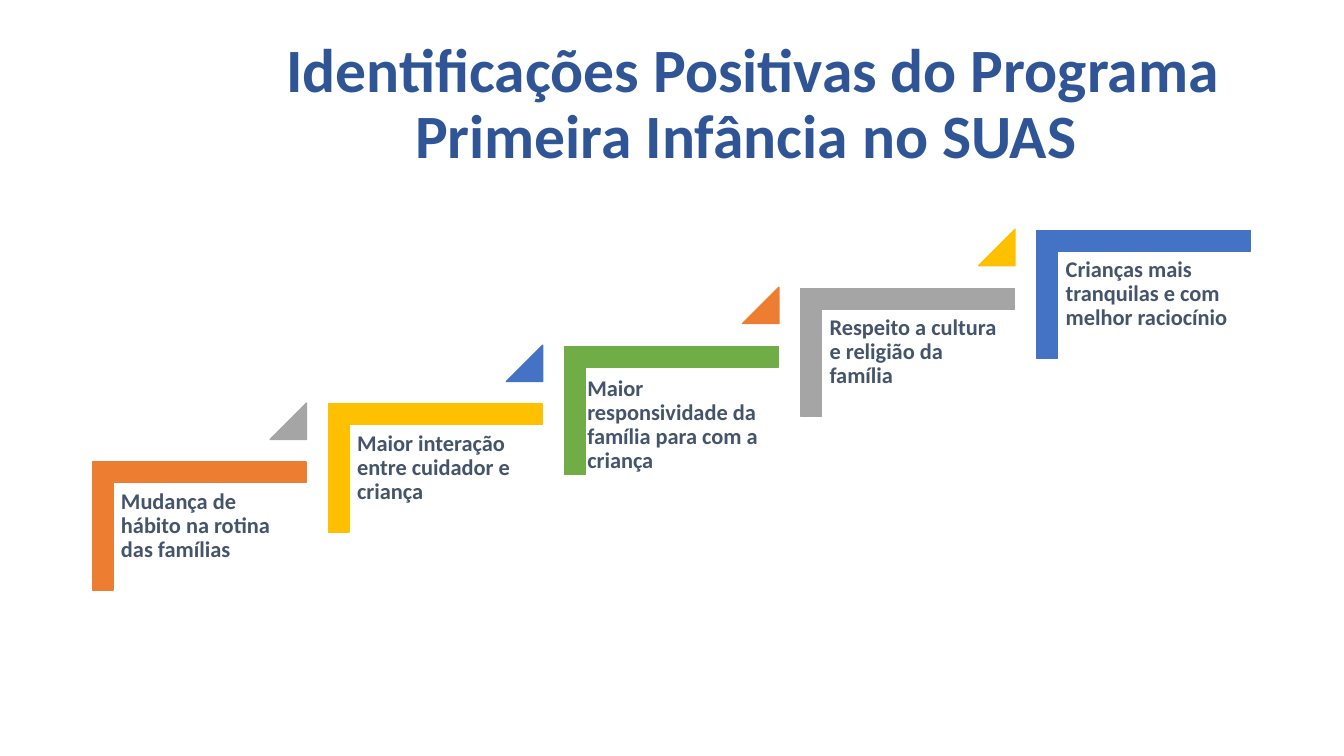
"""Build a slide of five rising steps under a title."""
from pptx import Presentation
from pptx.dml.color import RGBColor as Rgb
from pptx.enum.shapes import MSO_SHAPE as Shape
from pptx.enum.text import MSO_ANCHOR as Anchor, PP_ALIGN as Align
from pptx.util import Inches as In, Pt

THEME = {
    "font": "Calibri", "title": "2F5597", "text": "44546A",
    "big": 44, "small": 16, "edge": 1,
    "orange": "ED7D31", "gold": "FFC000", "green": "70AD47",
    "gray": "A5A5A5", "blue": "4472C4",
}
LEFT, TOP = 1.34, 4.16
RUN, RISE = 2.3425, 0.575
THICK, LONG, TIP = 1.27, 2.12, 0.36

STEPS = [
    ("Mudança de hábito na rotina das famílias", "orange", "gray"),
    ("Maior interação entre cuidador e criança", "gold", "blue"),
    ("Maior responsividade da família para com a criança", "green", "orange"),
    ("Respeito a cultura e religião da família", "gray", "gold"),
    ("Crianças mais tranquilas e com melhor raciocínio", "blue", None),
]
NOTE = (-0.21, 0.63, 1.91, 1.68)
WIDE = (-0.27, 0.66, 2.02, 1.63)

deck = Presentation()
deck.slide_width, deck.slide_height = In(13.33), In(7.5)
slide = deck.slides.add_slide(deck.slide_layouts[6])


def add_text(text, box, size, color):
    frame = slide.shapes.add_textbox(*map(In, box)).text_frame
    frame.word_wrap = True
    para = frame.paragraphs[0]
    para.text = text
    para.line_spacing = 0.9
    para.font.name = THEME["font"]
    para.font.size = Pt(THEME[size])
    para.font.bold = True
    para.font.color.rgb = Rgb.from_string(THEME[color])
    return frame


def add_mark(kind, box, color, *bends):
    mark = slide.shapes.add_shape(kind, *map(In, box))
    mark.shadow.inherit = False
    for spot, bend in enumerate(bends):
        mark.adjustments[spot] = bend
    tint = Rgb.from_string(THEME[color])
    mark.fill.solid()
    mark.fill.fore_color.rgb = tint
    mark.line.color.rgb = tint
    mark.line.width = Pt(THEME["edge"])
    return mark


head = add_text("Identificações Positivas do Programa Primeira Infância no SUAS ",
                (2.2, 0.4, 10.54, 1.29), "big", "title")
head.vertical_anchor = Anchor.MIDDLE
head.paragraphs[0].alignment = Align.CENTER

for step, (text, color, tip) in enumerate(STEPS):
    x, y = LEFT + step * RUN, TOP - step * RISE
    stair = add_mark(Shape.CORNER, (x, y, THICK, LONG), color, 0.161, 0.161)
    stair.rotation = 90
    dx, dy, wide, high = WIDE if color == "green" else NOTE
    note = add_text(text, (x + dx, y + dy, wide, high), "small", "text")
    note.margin_left = note.margin_right = In(0.07)
    note.margin_top = note.margin_bottom = In(0.07)
    if tip:
        add_mark(Shape.ISOSCELES_TRIANGLE, (x + 1.34, y - 0.16, TIP, TIP), tip, 1)

deck.save("out.pptx")
